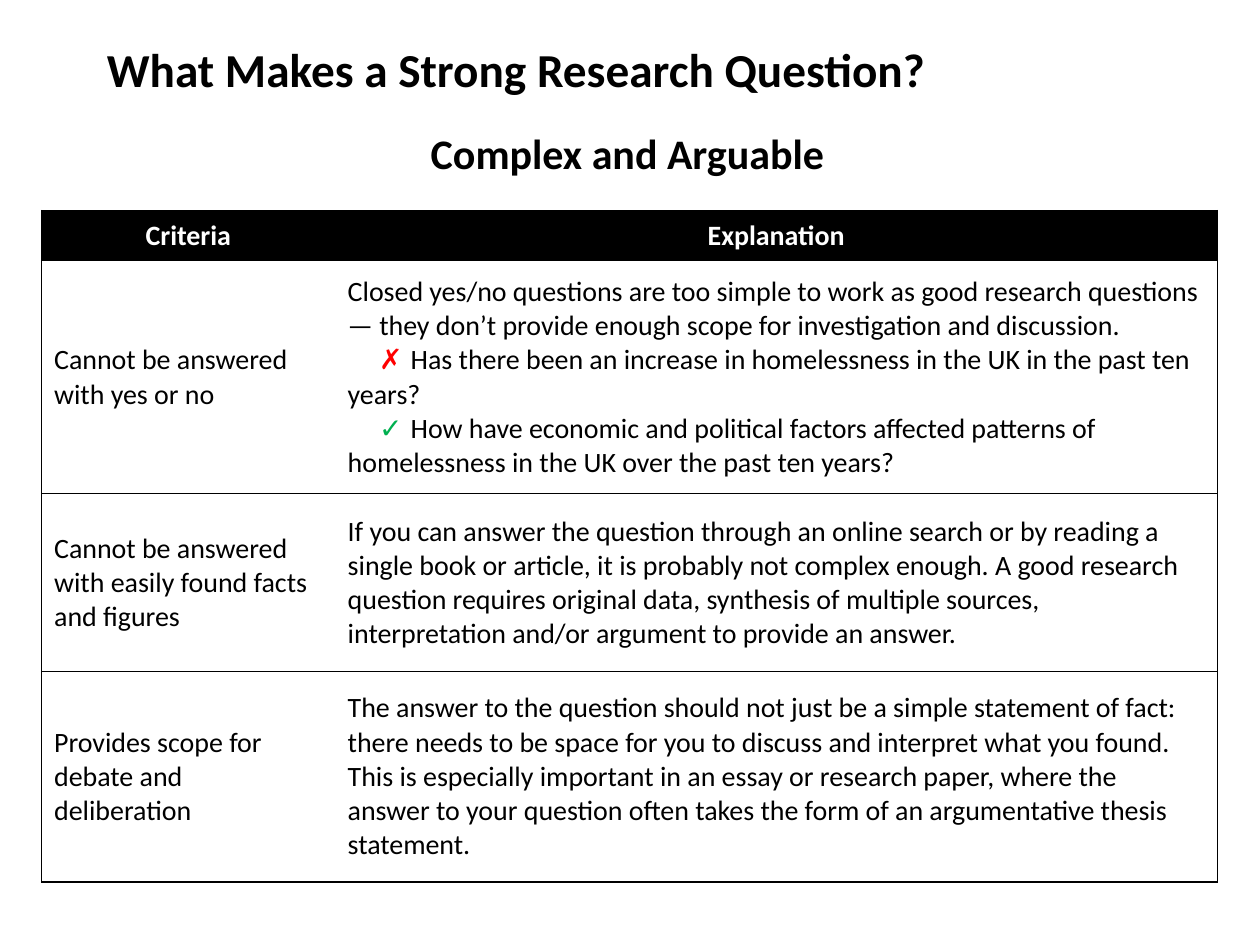
import pptx
import pptx.dml.color
import pptx.enum.text
import pptx.oxml
import pptx.oxml.ns
import pptx.util
from dataclasses import dataclass

In, Pt = pptx.util.Inches, pptx.util.Pt
RGB = pptx.dml.color.RGBColor.from_string
ALIGN = pptx.enum.text.PP_ALIGN
ANCHOR = pptx.enum.text.MSO_ANCHOR


@dataclass(frozen=True)
class Theme:
    font: str = "Calibri"
    ink: str = "000000"
    paper: str = "FFFFFF"
    title: float = 27
    subtitle: float = 24
    body: float = 16
    border: float = 0.75
    mark_indent: float = 0.25
    mark_tab: float = 0.56


T = Theme()
MARKS = {"✗": "FF0000", "✓": "00B050"}

# text, (left, top, width, height), size, wraps
HEADINGS = [
    ("What Makes a Strong Research Question?", (0.75, 0.27, 7.25, 0.56), T.title, True),
    ("Complex and Arguable", (3.32, 0.96, 3.35, 0.5), T.subtitle, False),
]

TABLE_AT = (0.33, 1.67)
COLS = [2.33, 7]
ROWS = [0.4, 1.85, 1.41, 1.67]

# Each cell is a list of (mark, text) paragraphs
CELLS = [
    ([("", "Criteria")], [("", "Explanation")]),
    (
        [("", "Cannot be answered with yes or no")],
        [
            ("", "Closed yes/no questions are too simple to work as good research questions "
                 "— they don’t provide enough scope for investigation and discussion."),
            ("✗", "Has there been an increase in homelessness in the UK in the past ten years?"),
            ("✓", "How have economic and political factors affected patterns of "
                  "homelessness in the UK over the past ten years?"),
        ],
    ),
    (
        [("", "Cannot be answered with easily found facts and figures")],
        [("", "If you can answer the question through an online search or by reading a "
              "single book or article, it is probably not complex enough. A good research "
              "question requires original data, synthesis of multiple sources, "
              "interpretation and/or argument to provide an answer.")],
    ),
    (
        [("", "Provides scope for debate and deliberation")],
        [("", "The answer to the question should not just be a simple statement of fact: "
              "there needs to be space for you to discuss and interpret what you found. "
              "This is especially important in an essay or research paper, where the "
              "answer to your question often takes the form of an argumentative thesis "
              "statement.")],
    ),
]


def style(p, size, color=T.ink, bold=False):
    p.font.name, p.font.size, p.font.bold = T.font, Pt(size), bold
    p.font.color.rgb = RGB(color)


def add_heading(s, text, box, size, wraps):
    tf = s.shapes.add_textbox(*map(In, box)).text_frame
    tf.word_wrap = wraps
    tf.auto_size = pptx.enum.text.MSO_AUTO_SIZE.SHAPE_TO_FIT_TEXT
    p = tf.paragraphs[0]
    p.text = text
    style(p, size, bold=True)


def add_mark(p, mark):
    """Start an indented paragraph with a coloured mark and a tab."""
    r = p.add_run()
    r.text = mark + "\t"
    r.font.color.rgb = RGB(MARKS[mark])
    pPr = p._p.get_or_add_pPr()
    pPr.set("marL", "0")
    pPr.set("indent", str(In(T.mark_indent)))
    pPr.insert(0, pptx.oxml.parse_xml(
        f'<a:tabLst {pptx.oxml.ns.nsdecls("a")}>'
        f'<a:tab pos="{In(T.mark_tab)}" algn="l"/></a:tabLst>'))


def set_borders(cell, edges):
    """Rule the edges named by their letters; clear the others."""
    tcPr = cell._tc.get_or_add_tcPr()
    for i, edge in enumerate("LRTB"):
        paint = (f'<a:solidFill><a:srgbClr val="{T.ink}"/></a:solidFill>'
                 if edge in edges else "<a:noFill/>")
        tcPr.insert(i, pptx.oxml.parse_xml(
            f'<a:ln{edge} {pptx.oxml.ns.nsdecls("a")} w="{Pt(T.border)}">{paint}</a:ln{edge}>'))


def fill_cell(cell, paragraphs, header, edges):
    cell.vertical_anchor = ANCHOR.MIDDLE
    cell.fill.solid()
    cell.fill.fore_color.rgb = RGB(T.ink if header else T.paper)
    set_borders(cell, edges)
    tf = cell.text_frame
    for i, (mark, text) in enumerate(paragraphs):
        p = tf.add_paragraph() if i else tf.paragraphs[0]
        p.alignment = ALIGN.CENTER if header else ALIGN.LEFT
        style(p, T.body, T.paper if header else T.ink, header)
        if mark:
            add_mark(p, mark)
        p.add_run().text = text


def add_criteria_table(s):
    size = sum(COLS), sum(ROWS)
    table = s.shapes.add_table(len(ROWS), len(COLS), *map(In, TABLE_AT + size)).table
    table.first_row = table.horz_banding = False
    for column, width in zip(table.columns, COLS):
        column.width = In(width)
    for y, (height, row) in enumerate(zip(ROWS, CELLS)):
        table.rows[y].height = In(height)
        for x, paragraphs in enumerate(row):
            fill_cell(table.cell(y, x), paragraphs, y == 0, "TB" + "LR"[x])


def main():
    prs = pptx.Presentation()
    prs.slide_width, prs.slide_height = In(10), In(7.5)
    s = prs.slides.add_slide(prs.slide_layouts[6])
    title, subtitle = HEADINGS
    add_heading(s, *title)
    add_criteria_table(s)
    add_heading(s, *subtitle)
    prs.save("out.pptx")


if __name__ == "__main__":
    main()
